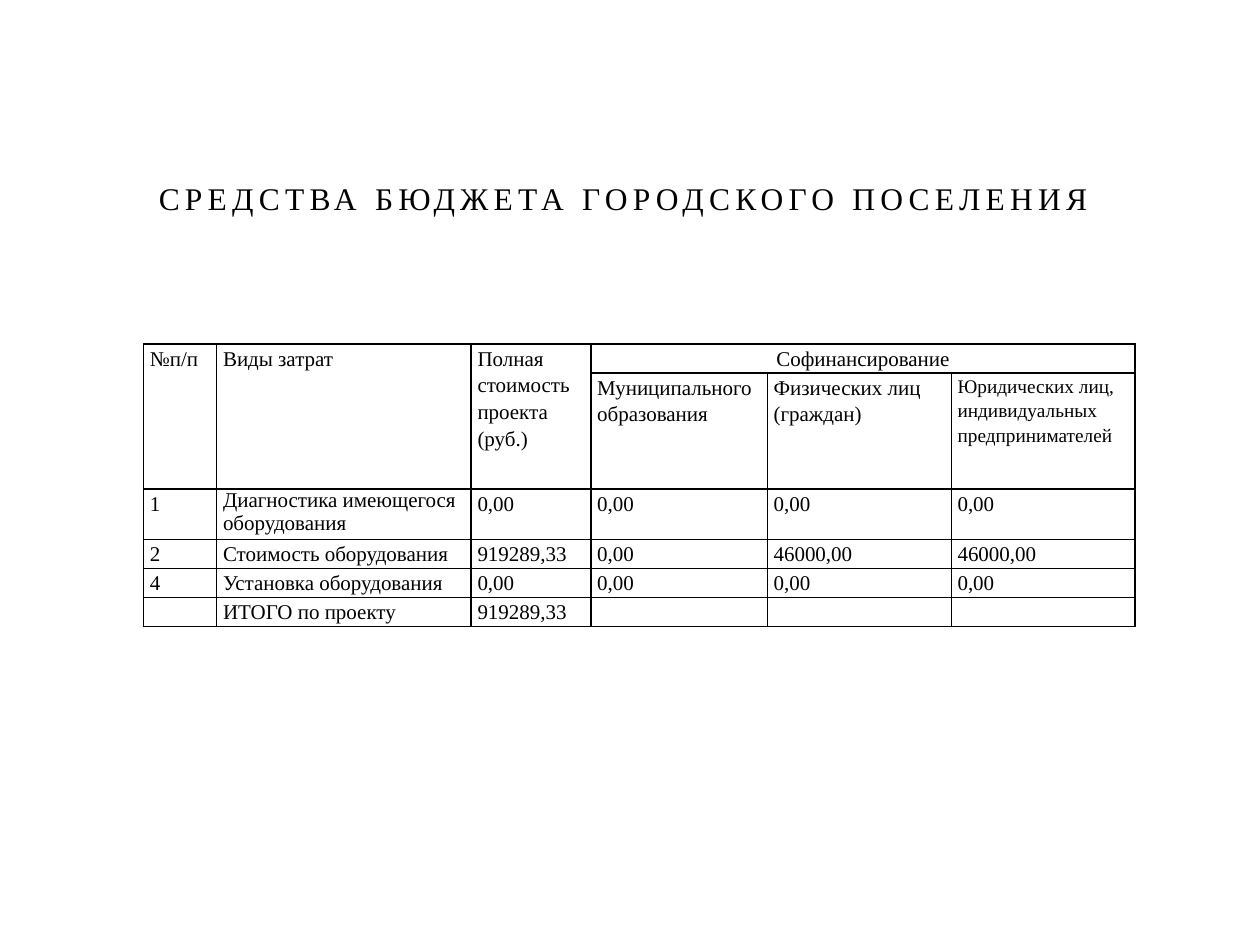
from lxml import etree
from pptx import Presentation, util as u
from pptx.dml.color import RGBColor
from pptx.enum import text
from pptx.oxml.ns import qn

FACE, INK = "Times New Roman", "000000"
TITLE = "СРЕДСТВА БЮДЖЕТА ГОРОДСКОГО ПОСЕЛЕНИЯ "
ROWS = [
    ["№п/п", "Виды затрат", "Полная стоимость проекта (руб.)", "Софинансирование", "", ""],
    ["", "", "", "Муниципального образования", "Физических лиц (граждан)",
     "Юридических лиц, индивидуальных предпринимателей"],
    ["1", "Диагностика имеющегося оборудования", "0,00", "0,00", "0,00", "0,00"],
    ["2", "Стоимость оборудования", "919289,33", "0,00", "46000,00", "46000,00"],
    ["4", "Установка оборудования", "0,00", "0,00", "0,00", "0,00"],
    ["", "ИТОГО по проекту", "919289,33", "", "", ""],
]
WIDE = [0.58, 2.02, 0.95, 1.4, 1.46, 1.46]
HIGH = [0.21, 0.85, 0.4, 0.21, 0.21, 0.21]
SPANS = [((0, c), (1, c)) for c in range(3)] + [((0, 3), (0, 5))]
SIZES = {(1, 5): 11}
LEADS = {(2, 1): 1.0}
MID = text.PP_ALIGN.CENTER
ALIGNS = {(0, 3): MID}


def put(obj, vals):
    for key, val in vals.items():
        setattr(obj, key, val)


def tint(hue):
    return RGBColor.from_string(hue)


def write(para, words, size):
    run = para.add_run()
    run.text = words
    put(run.font, {"name": FACE, "size": u.Pt(size)})
    run.font.color.rgb = tint(INK)
    return run


def rule(cell):
    props = cell._tc.get_or_add_tcPr()
    for n, side in enumerate(("lnL", "lnR", "lnT", "lnB")):
        line = etree.Element(qn("a:" + side), w=str(u.Pt(1)))
        fill = etree.SubElement(line, qn("a:solidFill"))
        etree.SubElement(fill, qn("a:srgbClr"), val=INK)
        props.insert(n, line)


def fill_cell(cell, spot, words):
    put(cell, {"margin_left": u.Inches(0.05), "margin_right": u.Inches(0.05),
               "margin_top": 0, "margin_bottom": 0})
    cell.fill.background()
    rule(cell)
    para = cell.text_frame.paragraphs[0]
    put(para, {"line_spacing": LEADS.get(spot, 1.15), "alignment": ALIGNS.get(spot)})
    if words:
        write(para, words, SIZES.get(spot, 12))
    else:
        etree.SubElement(para._p, qn("a:endParaRPr"), sz="1200")


def main():
    deck = Presentation()
    put(deck, {"slide_width": u.Inches(10), "slide_height": u.Inches(7.5)})
    shapes = deck.slides.add_slide(deck.slide_layouts[6]).shapes

    head = shapes.add_textbox(*map(u.Inches, (1.14, 1.15, 7.72, 0.62))).text_frame
    put(head, {"word_wrap": True, "vertical_anchor": text.MSO_ANCHOR.BOTTOM})
    head.paragraphs[0].alignment = MID
    write(head.paragraphs[0], TITLE, 18).font._element.set("spc", "300")

    area = map(u.Inches, (1.14, 2.73, sum(WIDE), sum(HIGH)))
    grid = shapes.add_table(len(ROWS), len(WIDE), *area).table
    put(grid, {"first_row": False, "horz_banding": False})
    for col, size in zip(grid.columns, WIDE):
        col.width = u.Inches(size)
    for row, size in zip(grid.rows, HIGH):
        row.height = u.Inches(size)
    for r, row in enumerate(ROWS):
        for c, words in enumerate(row):
            fill_cell(grid.cell(r, c), (r, c), words)
    for start, end in SPANS:
        grid.cell(*start).merge(grid.cell(*end))

    deck.save("out.pptx")


if __name__ == "__main__":
    main()
